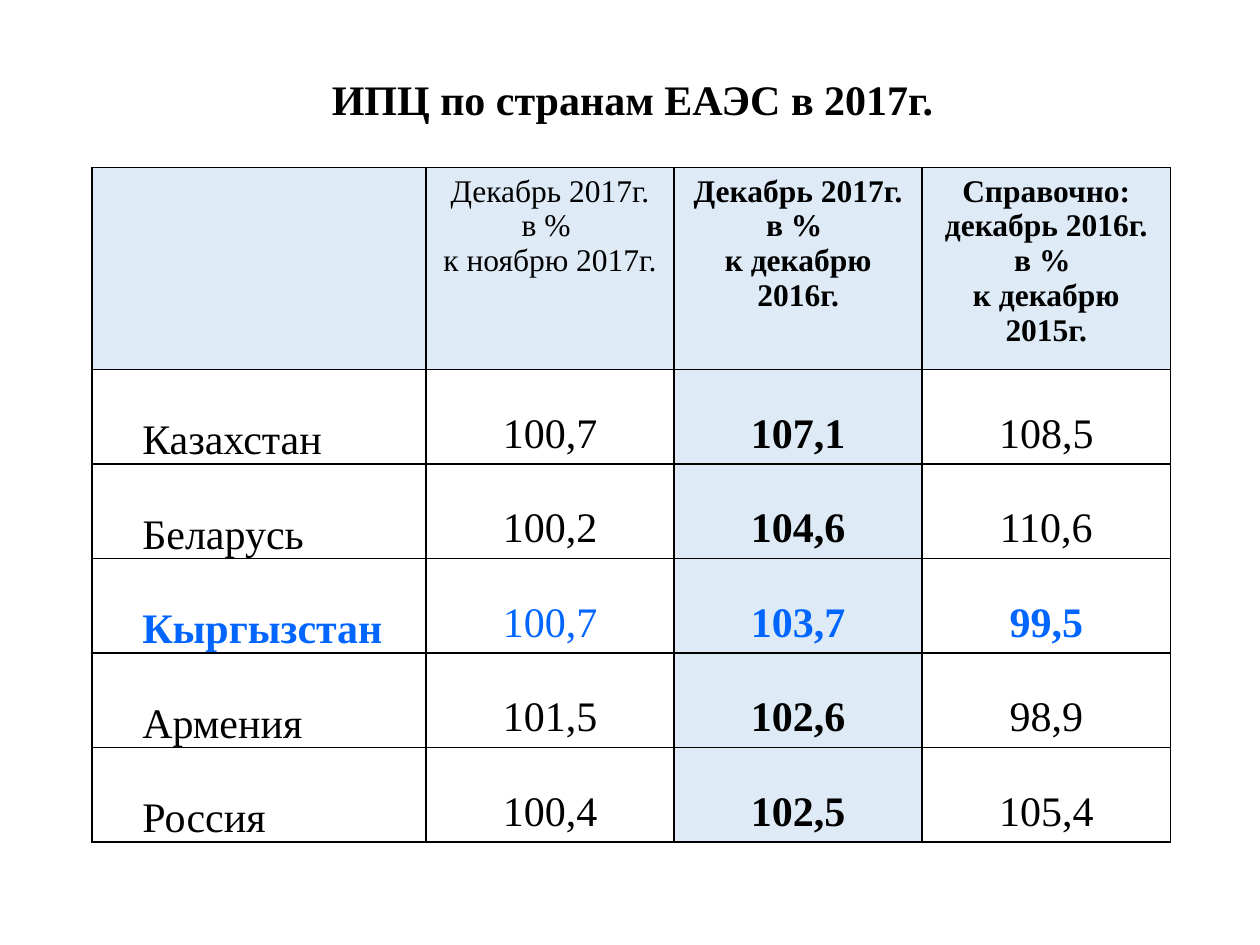
from lxml.etree import SubElement
from pptx import Presentation
from pptx.dml.color import RGBColor
from pptx.enum.text import MSO_ANCHOR as Anchor, PP_ALIGN as Align
from pptx.oxml.ns import qn
from pptx.util import Pt

COLORS = {"text": "000000", "accent": "0066FF", "shade": "DEEBF7", "border": "000000"}
FONT = "Times New Roman"
HEADERS = [
    [],
    ["Декабрь 2017г.", "в % ", "к ноябрю 2017г."],
    ["Декабрь 2017г.", "в % ", "к декабрю 2016г."],
    ["Справочно:", "декабрь 2016г.", "в % ", "к декабрю 2015г."],
]
COUNTRIES = [
    ["Казахстан", "100,7", "107,1", "108,5"],
    ["Беларусь", "100,2", "104,6", "110,6"],
    ["Кыргызстан", "100,7", "103,7", "99,5"],
    ["Армения", "101,5", "102,6", "98,9"],
    ["Россия", "100,4", "102,5", "105,4"],
]
HIGHLIGHTED = "Кыргызстан"
KEY_COLUMN = 2


def write_lines(text_frame, lines, size, bold, color, align):
    """Write each line as its own paragraph."""
    for index, line in enumerate(lines):
        paragraph = text_frame.paragraphs[0] if index == 0 else text_frame.add_paragraph()
        paragraph.alignment = align
        run = paragraph.add_run()
        run.text = line
        run.font.name = FONT
        run.font.size = Pt(size)
        run.font.bold = bold
        run.font.color.rgb = RGBColor.from_string(COLORS[color])


def style_cell(cell, shaded):
    """Draw the four borders, then set the fill, which must follow them in the XML."""
    properties = cell._tc.get_or_add_tcPr()
    for side in ("lnL", "lnR", "lnT", "lnB"):
        line = SubElement(properties, qn(f"a:{side}"), w=str(Pt(1)))
        fill = SubElement(line, qn("a:solidFill"))
        SubElement(fill, qn("a:srgbClr"), val=COLORS["border"])
    if shaded:
        cell.fill.solid()
        cell.fill.fore_color.rgb = RGBColor.from_string(COLORS["shade"])
    else:
        cell.fill.background()


presentation = Presentation()
presentation.slide_width, presentation.slide_height = Pt(720), Pt(540)
slide = presentation.slides.add_slide(presentation.slide_layouts[6])

# Title
title = slide.shapes.add_textbox(Pt(54.7), Pt(38.2), Pt(613.4), Pt(39.6)).text_frame
title.word_wrap = True
title.vertical_anchor = Anchor.MIDDLE
write_lines(title, ["ИПЦ по странам ЕАЭС в 2017г."], 24, True, "text", Align.CENTER)
title.paragraphs[0].line_spacing = 0.9

# Table
widths = [190.8] + [141.8] * 3
heights = [90] + [54] * len(COUNTRIES)
table = slide.shapes.add_table(
    len(heights), len(widths), Pt(52.6), Pt(95.8), Pt(sum(widths)), Pt(sum(heights))
).table
table.first_row = False
table.horz_banding = False
for column, width in zip(table.columns, widths):
    column.width = Pt(width)
for row, height in zip(table.rows, heights):
    row.height = Pt(height)

for column, lines in enumerate(HEADERS):
    cell = table.cell(0, column)
    style_cell(cell, True)
    write_lines(cell.text_frame, lines, 18, column >= KEY_COLUMN, "text", Align.CENTER)

for row, values in enumerate(COUNTRIES, start=1):
    highlighted = values[0] == HIGHLIGHTED
    for column, value in enumerate(values):
        cell = table.cell(row, column)
        style_cell(cell, column == KEY_COLUMN)
        cell.vertical_anchor = Anchor.BOTTOM
        bold = column == KEY_COLUMN or (highlighted and column != 1)
        color = "accent" if highlighted else "text"
        align = Align.CENTER if column else Align.LEFT
        write_lines(cell.text_frame, [value], 24, bold, color, align)
        if column == 0:
            cell.margin_left = cell.margin_right = cell.margin_top = Pt(0.7)
            cell.margin_bottom = Pt(0)
            indent = cell.text_frame.paragraphs[0]._p.get_or_add_pPr()
            indent.set("marL", str(Pt(28)))

presentation.save("out.pptx")
